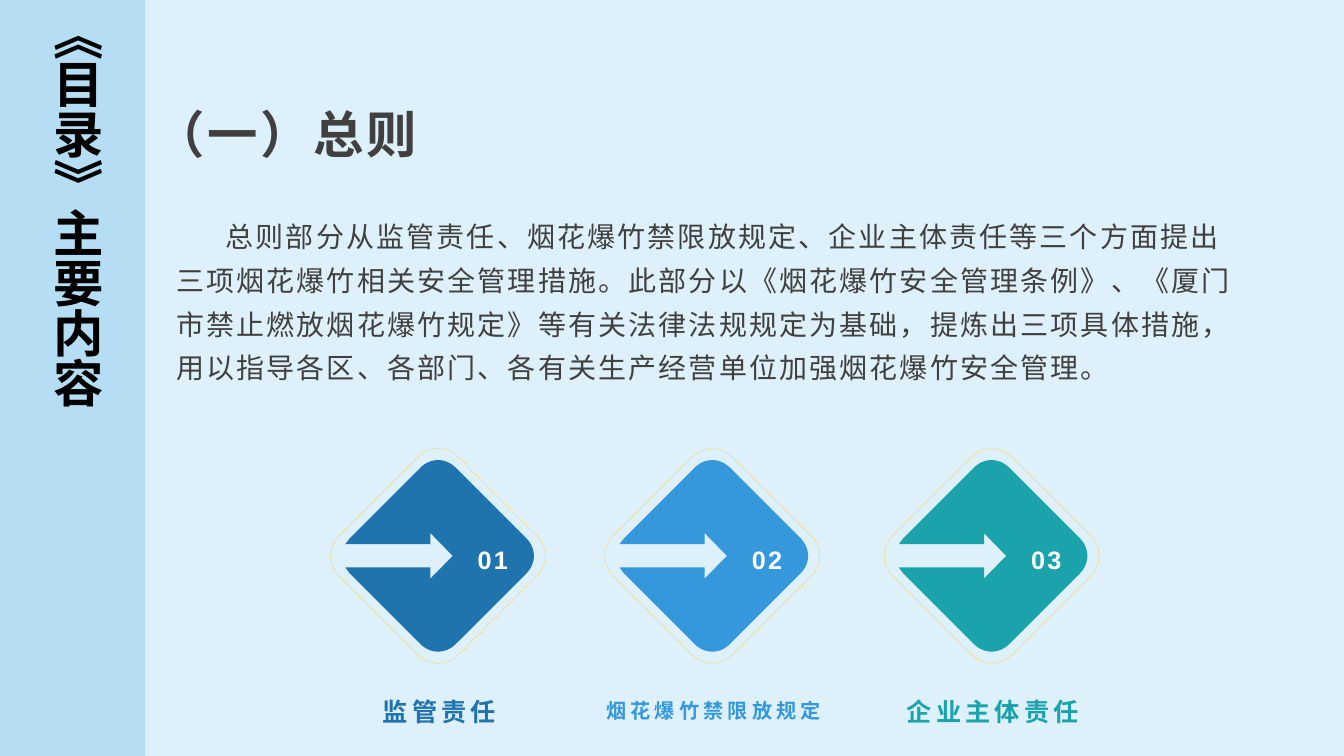
from dataclasses import dataclass
from pptx import Presentation
from pptx.dml.color import RGBColor as Rgb
from pptx.enum.dml import MSO_LINE as Dash
from pptx.enum.shapes import MSO_SHAPE as Kind
from pptx.enum.text import MSO_ANCHOR as Anchor, PP_ALIGN as Align
from pptx.oxml.ns import qn
from pptx.util import Inches, Pt


@dataclass(frozen=True)
class Theme:
    """Colours, font and type sizes."""
    page: str = "DEF0FA"
    band: str = "B5DDF4"
    ink: str = "404040"
    black: str = "000000"
    white: str = "FFFFFF"
    gold: str = "FFC000"
    blue: str = "1F74AD"
    sky: str = "3498DB"
    teal: str = "1AA3AA"
    font: str = "Arial"
    head: float = 36
    body: float = 20
    label: float = 18
    small: float = 14.4


def curve(a, b, c, d, steps=16):
    """Sample a cubic curve as points."""
    pts = []
    for i in range(steps + 1):
        t = i / steps
        u = 1 - t
        mix = (u ** 3, 3 * u * u * t, 3 * u * t * t, t ** 3)
        pts.append(tuple(sum(m * p[k] for m, p in zip(mix, (a, b, c, d)))
                         for k in (0, 1)))
    return pts


def outline():
    """Give the rounded diamond with an arrow cut into its left side."""
    top = curve((-2.1, -10.5), (-0.9, -11.7), (0.9, -11.7), (2.1, -10.5))
    right = [(-y, x) for x, y in top]
    low = [(-x, -y) for x, y in top]
    half = [(-10.5, 2.1), (-11.04, 1.38), (-0.9, 1.38), (-0.9, 2.7)]
    back = [(x, -y) for x, y in reversed(half)]
    return top + right + low + half + [(1.74, 0)] + back


class Deck:
    """Draw on one slide with a grid of 160 columns by 90 rows."""

    def __init__(self, theme):
        """Open a blank slide with the page colour."""
        self.theme = theme
        self.show = Presentation()
        self.show.slide_width = Inches(13.33)
        self.show.slide_height = Inches(7.5)
        self.cell = self.show.slide_height / 90
        self.slide = self.show.slides.add_slide(self.show.slide_layouts[6])
        self.shapes = self.slide.shapes
        self.paint(self.slide.background.fill, theme.page)

    def grid(self, *cells):
        """Turn grid cells into lengths."""
        return [round(n * self.cell) for n in cells]

    def paint(self, fill, tint):
        """Set a solid fill."""
        fill.solid()
        fill.fore_color.rgb = Rgb.from_string(tint)

    def word(self, shape, text, size, tint, bold=True, gap=0, lead=1.0,
             align=Align.LEFT, anchor=Anchor.MIDDLE, wrap=True):
        """Put one styled run in a shape and return its paragraph."""
        frame = shape.text_frame
        frame.word_wrap = wrap
        frame.vertical_anchor = anchor
        par = frame.paragraphs[0]
        par.alignment = align
        par.line_spacing = lead
        run = par.add_run()
        run.text = text
        run.font.name = self.theme.font
        run.font.size = Pt(size)
        run.font.bold = bold
        run.font.color.rgb = Rgb.from_string(tint)
        props = run.font._element
        props.set("spc", str(round(gap * 100)))
        props.set("lang", "zh-CN")
        east = props.makeelement(qn("a:ea"), {"typeface": self.theme.font})
        props.find(qn("a:latin")).addnext(east)
        return par

    def text(self, box, *args, **style):
        """Add a text box."""
        shape = self.shapes.add_textbox(*self.grid(*box))
        return self.word(shape, *args, **style)

    def band(self, box, text):
        """Add the side band with upright text."""
        shape = self.shapes.add_shape(Kind.RECTANGLE, *self.grid(*box))
        shape.shadow.inherit = False
        self.paint(shape.fill, self.theme.band)
        shape.line.fill.background()
        self.word(shape, text, self.theme.head, self.theme.black,
                  gap=-0.5, lead=0.9)
        shape.text_frame._txBody.bodyPr.set("vert", "eaVert")

    def ring(self, x, y, side):
        """Add the dashed frame turned by 45 degrees."""
        box = self.grid(x - side / 2, y - side / 2, side, side)
        shape = self.shapes.add_shape(Kind.ROUNDED_RECTANGLE, *box)
        shape.shadow.inherit = False
        shape.rotation = 45
        shape.fill.background()
        shape.line.color.rgb = Rgb.from_string(self.theme.gold)
        shape.line.width = Pt(0.25)
        shape.line.dash_style = Dash.DASH

    def gem(self, x, y, tint):
        """Add the filled diamond."""
        pts = [self.grid(x + dx, y + dy) for dx, dy in outline()]
        form = self.shapes.build_freeform(*pts[0])
        form.add_line_segments(pts[1:], close=True)
        shape = form.convert_to_shape()
        shape.shadow.inherit = False
        self.paint(shape.fill, tint)
        shape.line.fill.background()

    def step(self, x, num, name, tint, size):
        """Add one numbered diamond with its label."""
        y = 66.18
        self.ring(x, y, 20.04)
        self.gem(x, y, tint)
        self.text((x + 3.54, 63.12, 6.84, 6), f"{num:02}", self.theme.label,
                  self.theme.white, gap=1.5, lead=1.3, anchor=Anchor.TOP,
                  wrap=False)
        label = self.text((x - 14.24, 80.76, 28.8, 6.48), name, size, tint,
                          gap=3, lead=1.2, align=Align.CENTER)
        label._p.getparent().bodyPr.set("bIns", "0")


def main():
    """Build the slide."""
    look = Theme()
    deck = Deck(look)
    deck.text((17.16, 10.08, 51.96, 11.52), "（一）总则", look.head, look.ink,
              gap=2)
    body = deck.text(
        (19.8, 24.36, 129.12, 38.64),
        "总则部分从监管责任、烟花爆竹禁限放规定、企业主体责任等三个方面提出"
        "三项烟花爆竹相关安全管理措施。此部分以《烟花爆竹安全管理条例》、"
        "《厦门市禁止燃放烟花爆竹规定》等有关法律法规规定为基础，"
        "提炼出三项具体措施，用以指导各区、各部门、各有关生产经营单位"
        "加强烟花爆竹安全管理。",
        look.body, look.ink, bold=False, gap=1.5, lead=Pt(31.2),
        anchor=Anchor.TOP)
    body._p.get_or_add_pPr().set("indent", str(Inches(0.49)))
    deck.band((0, 0, 17.28, 90), "《目录》主要内容")
    steps = (
        (52.14, "监管责任", look.blue, look.label),
        (84.78, "烟花爆竹禁限放规定", look.sky, look.small),
        (118.02, "企业主体责任", look.teal, look.label),
    )
    for num, (x, name, tint, size) in enumerate(steps, 1):
        deck.step(x, num, name, tint, size)
    deck.show.save("out.pptx")


if __name__ == "__main__":
    main()
